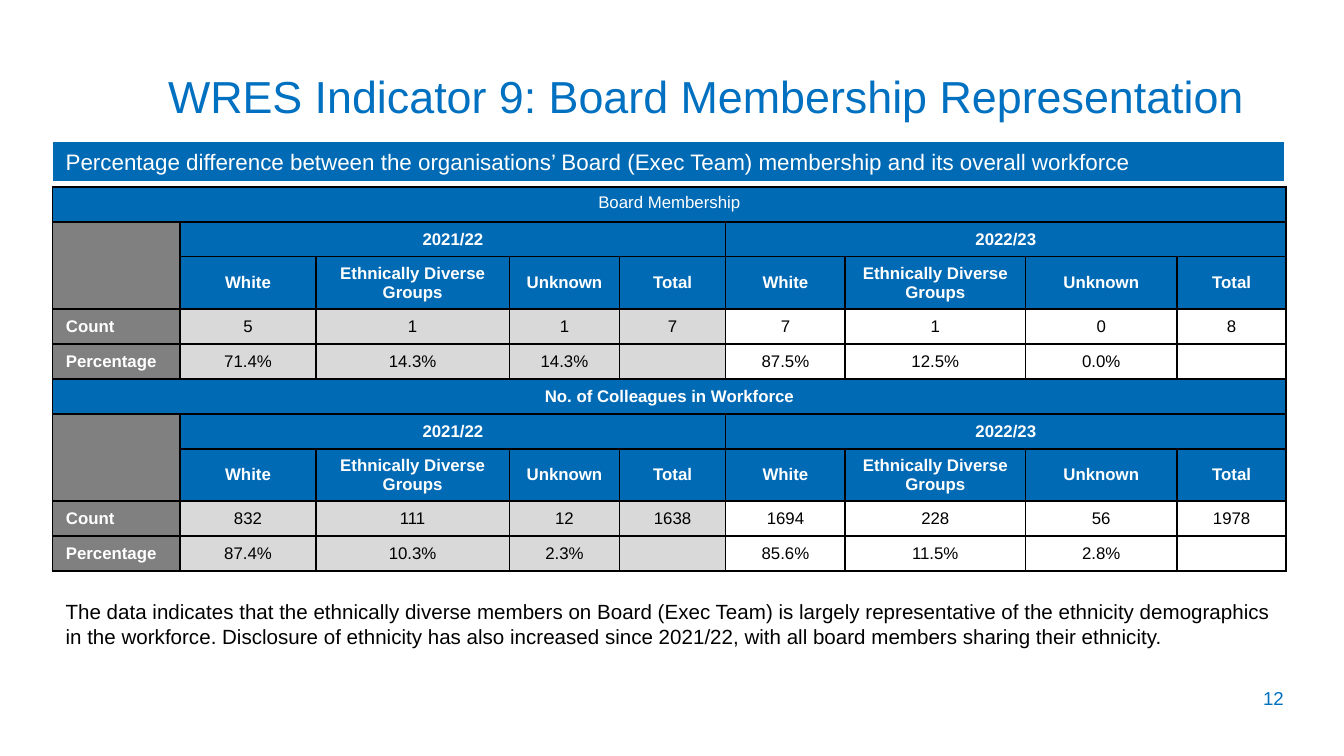
from dataclasses import dataclass

from lxml import etree
from pptx import Presentation
from pptx.dml.color import RGBColor
from pptx.enum.shapes import MSO_SHAPE
from pptx.enum.text import MSO_ANCHOR, MSO_AUTO_SIZE, PP_ALIGN
from pptx.oxml.ns import qn
from pptx.util import Inches, Pt

RECTANGLE = MSO_SHAPE.RECTANGLE
TOP, MIDDLE = MSO_ANCHOR.TOP, MSO_ANCHOR.MIDDLE
LEFT, CENTER, RIGHT = PP_ALIGN.LEFT, PP_ALIGN.CENTER, PP_ALIGN.RIGHT
NO_AUTOFIT = MSO_AUTO_SIZE.NONE

FONT = "Arial"
COLORS = {
    "accent": "0070C0",
    "header": "006AB4",
    "label": "808080",
    "previous": "D9D9D9",
    "white": "FFFFFF",
    "black": "000000",
}
MARGIN, CONTENT_WIDTH = 0.39, 9.17
COLUMN_WIDTHS = [0.95, 1.01, 1.44, 0.82, 0.79, 0.89, 1.34, 1.13, 0.81]
SECTION_HEIGHTS = [0.26, 0.26, 0.39, 0.26, 0.26]
YEARS = ["2021/22", "2022/23"]
GROUPS = ["White", "Ethnically Diverse Groups", "Unknown", "Total"]


@dataclass
class Section:
    heading: str
    heading_bold: bool
    heading_anchor: MSO_ANCHOR
    counts: list[str]
    percentages: list[str]


@dataclass
class CellStyle:
    fill: str
    color: str = "white"
    bold: bool = True
    align: PP_ALIGN = CENTER
    anchor: MSO_ANCHOR = MIDDLE


SECTIONS = [
    Section("Board Membership", False, TOP,
            ["5", "1", "1", "7", "7", "1", "0", "8"],
            ["71.4%", "14.3%", "14.3%", "", "87.5%", "12.5%", "0.0%", ""]),
    Section("No. of Colleagues in Workforce", True, MIDDLE,
            ["832", "111", "12", "1638", "1694", "228", "56", "1978"],
            ["87.4%", "10.3%", "2.3%", "", "85.6%", "11.5%", "2.8%", ""]),
]
HEADER = CellStyle("header")
LABEL = CellStyle("label", align=LEFT)
PREVIOUS_YEAR = CellStyle("previous", "black", False)
CURRENT_YEAR = CellStyle("white", "black", False)


def rgb(name: str) -> RGBColor:
    return RGBColor.from_string(COLORS[name])


def write(frame, text: str, size: float, color: str,
          align: PP_ALIGN = LEFT, bold: bool = False) -> None:
    frame.text = text
    paragraph = frame.paragraphs[0]
    paragraph.alignment = align
    for run in paragraph.runs:
        run.font.name = FONT
        run.font.size = Pt(size)
        run.font.bold = bold
        run.font.color.rgb = rgb(color)


def add_text(slide, box: tuple, text: str, size: float, color: str,
             align: PP_ALIGN = LEFT) -> None:
    frame = slide.shapes.add_textbox(*map(Inches, box)).text_frame
    frame.word_wrap = True
    write(frame, text, size, color, align)


def add_borders(cell) -> None:
    properties = cell._tc.get_or_add_tcPr()
    for side in ("a:lnL", "a:lnR", "a:lnT", "a:lnB"):
        line = etree.SubElement(properties, qn(side), w=str(Pt(1)))
        fill = etree.SubElement(line, qn("a:solidFill"))
        etree.SubElement(fill, qn("a:srgbClr"), val=COLORS["black"])


def fill_cell(cell, text: str, style: CellStyle) -> None:
    cell.fill.solid()
    cell.fill.fore_color.rgb = rgb(style.fill)
    cell.vertical_anchor = style.anchor
    write(cell.text_frame, text, 9, style.color, style.align, style.bold)
    if not text:
        paragraph = cell.text_frame.paragraphs[0]._p
        etree.SubElement(paragraph, qn("a:endParaRPr"), sz="900")


def fill_section(table, first: int, section: Section) -> None:
    last_column = len(COLUMN_WIDTHS) - 1
    years, groups, count, percentage = range(first + 1, first + 5)

    heading = table.cell(first, 0)
    heading.merge(table.cell(first, last_column))
    fill_cell(heading, section.heading,
              CellStyle("header", bold=section.heading_bold,
                        anchor=section.heading_anchor))

    corner = table.cell(years, 0)
    corner.merge(table.cell(groups, 0))
    fill_cell(corner, "", LABEL)

    for index, year in enumerate(YEARS):
        start = 1 + index * len(GROUPS)
        year_cell = table.cell(years, start)
        year_cell.merge(table.cell(years, start + len(GROUPS) - 1))
        fill_cell(year_cell, year, HEADER)
        for offset, group in enumerate(GROUPS):
            fill_cell(table.cell(groups, start + offset), group, HEADER)

    for row, label, values in ((count, "Count", section.counts),
                               (percentage, "Percentage", section.percentages)):
        fill_cell(table.cell(row, 0), label, LABEL)
        for column, value in enumerate(values, 1):
            style = PREVIOUS_YEAR if column <= len(GROUPS) else CURRENT_YEAR
            fill_cell(table.cell(row, column), value, style)


def add_representation_table(slide) -> None:
    heights = SECTION_HEIGHTS * len(SECTIONS)
    table = slide.shapes.add_table(
        len(heights), len(COLUMN_WIDTHS), Inches(MARGIN), Inches(1.39),
        Inches(CONTENT_WIDTH), Inches(sum(heights))).table
    table.first_row = table.horz_banding = False
    for column, width in zip(table.columns, COLUMN_WIDTHS):
        column.width = Inches(width)
    for row, height in zip(table.rows, heights):
        row.height = Inches(height)
    for cell in table.iter_cells():
        add_borders(cell)
    for index, section in enumerate(SECTIONS):
        fill_section(table, index * len(SECTION_HEIGHTS), section)


def add_banner(slide, text: str) -> None:
    banner = slide.shapes.add_shape(
        RECTANGLE, Inches(MARGIN), Inches(1.05), Inches(CONTENT_WIDTH), Inches(0.3))
    banner.shadow.inherit = False
    banner.fill.solid()
    banner.fill.fore_color.rgb = rgb("header")
    banner.line.color.rgb = rgb("white")
    banner.line.width = Pt(0.75)
    write(banner.text_frame, text, 12, "white")


def set_title(slide, text: str) -> None:
    title = slide.shapes.title
    title.left, title.top, title.width, title.height = map(
        Inches, (1.15, 0.46, 8.4, 0.58))
    title.text_frame.auto_size = NO_AUTOFIT
    title.text_frame.vertical_anchor = MIDDLE
    title.text_frame.margin_bottom = Inches(0.12)
    write(title.text_frame, text, 24, "accent")


def main() -> None:
    presentation = Presentation()
    presentation.slide_width = Inches(10)
    presentation.slide_height = Inches(10) * 9 // 16
    slide = presentation.slides.add_slide(presentation.slide_layouts[5])
    set_title(slide, "WRES Indicator 9: Board Membership Representation")
    add_banner(slide, "Percentage difference between the organisations’ Board "
                      "(Exec Team) membership and its overall workforce")
    add_representation_table(slide)
    add_text(slide, (MARGIN, 4.41, CONTENT_WIDTH, 0.47),
             "The data indicates that the ethnically diverse members on Board "
             "(Exec Team) is largely representative of the ethnicity demographics "
             "in the workforce. Disclosure of ethnicity has also increased since "
             "2021/22, with all board members sharing their ethnicity.",
             11, "black")
    add_text(slide, (9.28, 5.06, 0.37, 0.27), "12", 10, "accent", RIGHT)
    presentation.save("out.pptx")


if __name__ == "__main__":
    main()
